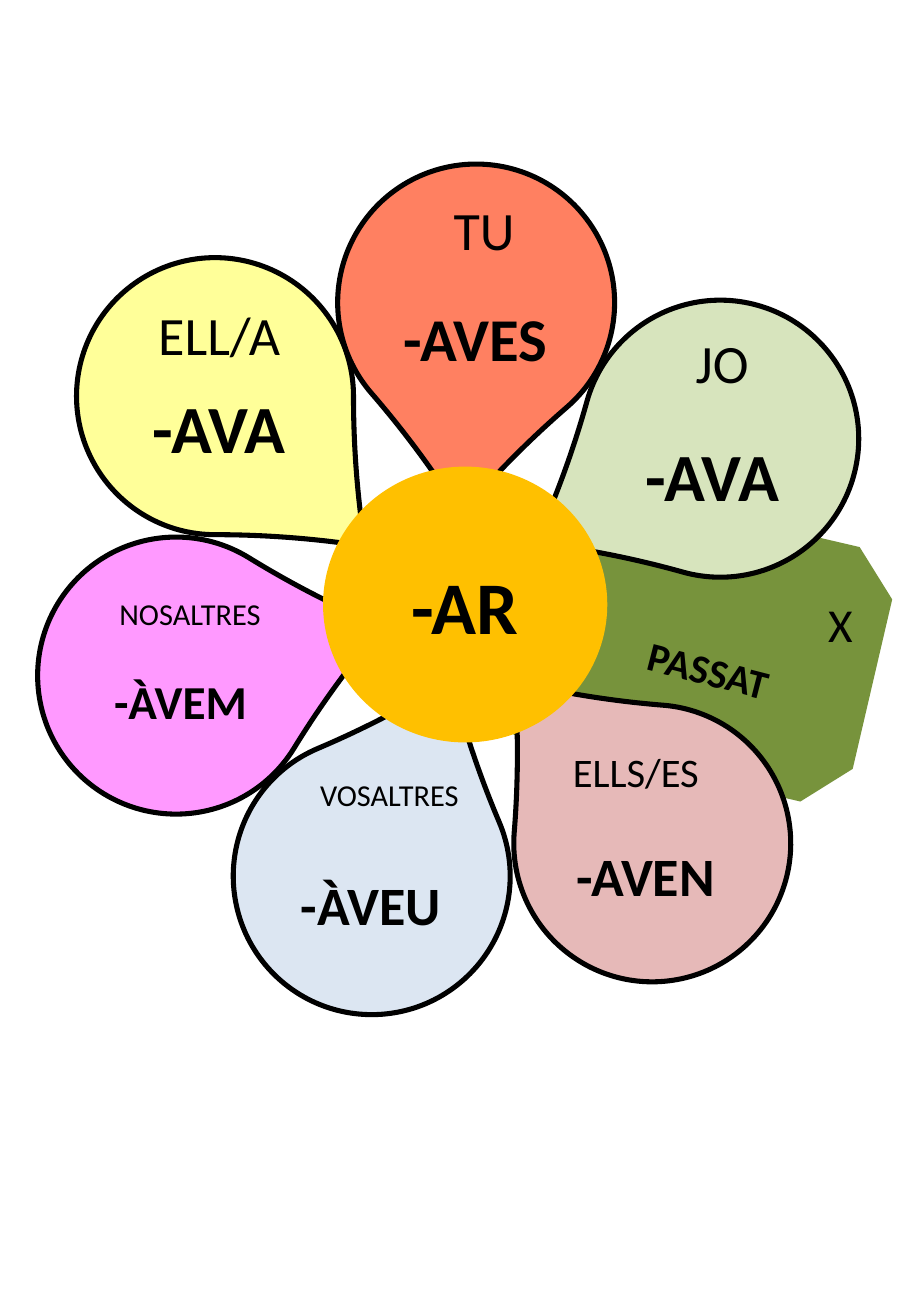
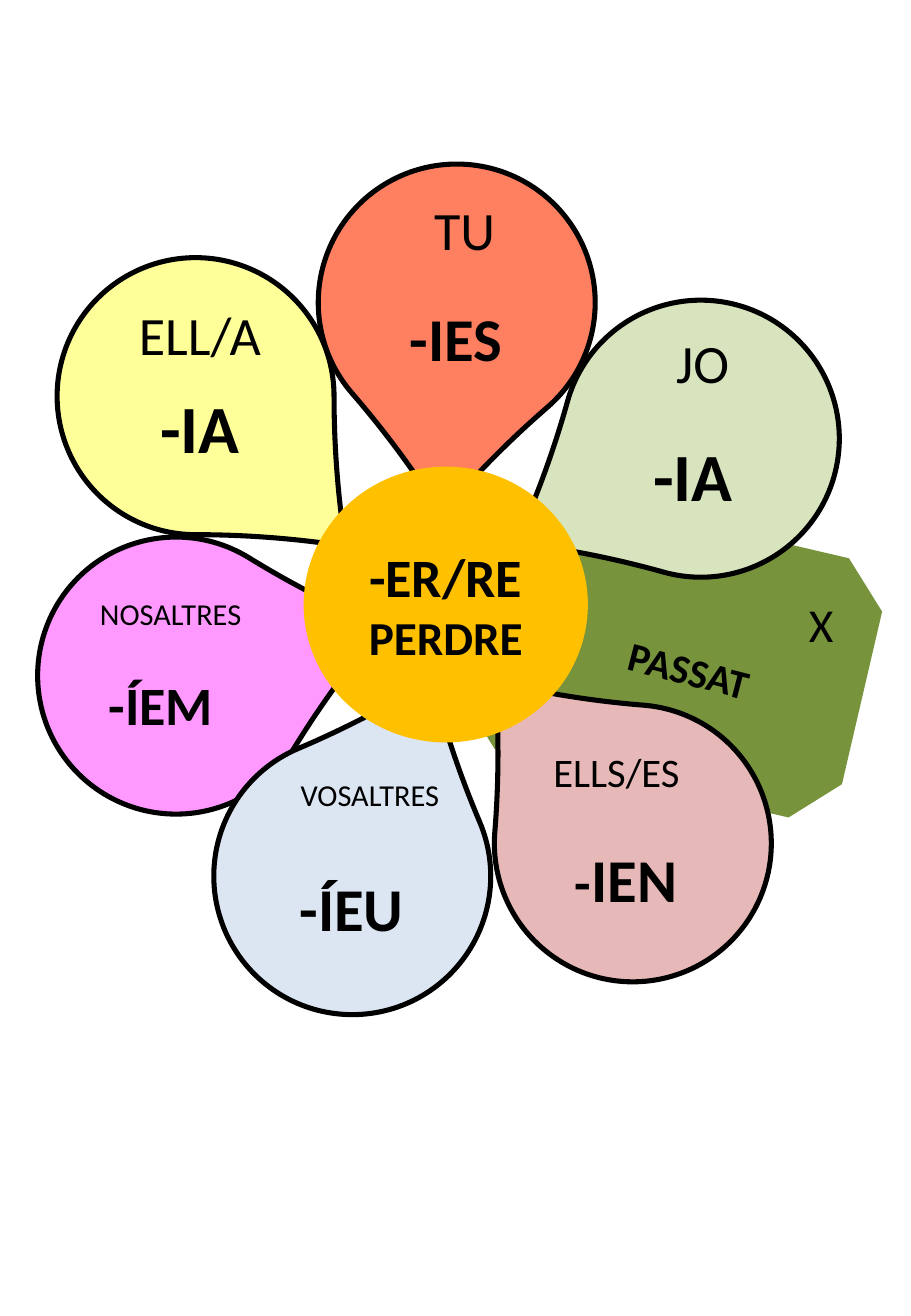
from collections import namedtuple

from lxml import etree
from pptx import Presentation
from pptx import util as u
from pptx.dml.color import RGBColor
from pptx.enum import shapes, text
from pptx.oxml.ns import qn

# Shared style
FONT = "Calibri"
BLACK = "000000"
LEAF_GREEN = "77933C"
HEART_GOLD = "FFC000"
PETAL_SIZE = 2.28
LABEL_WIDTH = 1.41

# Petal geometry, pronoun label and the place of the verb ending
Petal = namedtuple(
    "Petal", "left top turn colour opacity pronoun size label_at ending_at")
PETALS = [
    Petal(2.78, 1.35, 139.1, "FF3300", 62, "TU", 32, (3.28, 1.57), (3.21, 2.43)),
    Petal(4.79, 2.47, 195.6, "D7E4BD", 100, "JO", 32, (5.24, 2.66), (5.16, 3.52)),
    Petal(0.63, 2.12, 90, "FFFF99", 100, "ELL/A", 32, (1.1, 2.43), (1.1, 3.13)),
    Petal(0.31, 4.42, 31.6, "FF99FF", 100, "NOSALTRES", 18, (0.86, 4.85), (0.78, 5.48)),
    Petal(1.92, 6.07, 337, "DCE6F2", 100, "VOSALTRES", 18, (2.5, 6.34), (2.35, 7.12)),
    Petal(4.23, 5.8, 274.6, "E6B9B8", 100, "ELLS/ES", 24, (4.53, 6.1), (4.61, 6.88)),
]

# Verb families: each text is a list of (wording, size) spans
Flower = namedtuple("Flower", "shift leaf heart endings loose_petal")
FLOWERS = [
    Flower(0, (4.71, 3.87, 2.15, 2.87), [[("-AR", 44)]],
           {"TU": [("-AVES", 36)], "JO": [("-AVA", 40)],
            "ELL/A": [("-AVA", 40)], "NOSALTRES": [("-ÀVEM", 28)],
            "VOSALTRES": [("-ÀVEU", 32)], "ELLS/ES": [("-AVEN", 32)]},
           None),
    Flower(-0.16, (4.57, 3.94, 2.19, 2.94), [[("-ER/RE", 32)], [("PERDRE", 28)]],
           {"TU": [("-IES", 36)], "JO": [("-IA", 40)],
            "ELL/A": [("-IA", 40)], "NOSALTRES": [("-ÍEM", 32)],
            "VOSALTRES": [("-ÍEU", 36)], "ELLS/ES": [("-", 32), ("IEN", 36)]},
           "NOSALTRES"),
]


def paint(target, colour):
    """Fill a shape or colour a line's fill or a font's fill."""
    target.solid()
    target.fore_color.rgb = RGBColor.from_string(colour)


def write(frame, lines, bold, align):
    for index, spans in enumerate(lines):
        para = frame.paragraphs[0] if index == 0 else frame.add_paragraph()
        para.alignment = align
        for wording, size in spans:
            span = para.add_run()
            span.text = wording
            span.font.name = FONT
            span.font.size = u.Pt(size)
            span.font.bold = bold
            paint(span.font.fill, BLACK)


def add_figure(parent, kind, frame, colour, turn=0, adjust=()):
    figure = parent.shapes.add_shape(kind, *map(u.Inches, frame))
    figure.shadow.inherit = False
    figure.rotation = turn
    for index, value in enumerate(adjust):
        figure.adjustments[index] = value
    paint(figure.fill, colour)
    figure.line.fill.background()
    return figure


def add_petal(parent, petal, shift):
    frame = (petal.left + shift, petal.top, PETAL_SIZE, PETAL_SIZE)
    figure = add_figure(parent, shapes.MSO_SHAPE.TEAR, frame, petal.colour,
                        petal.turn, [1.083])
    paint(figure.line.fill, BLACK)
    figure.line.width = u.Pt(3)
    if petal.opacity < 100:
        colour = figure.fill._xPr.find(qn("a:solidFill"))[0]
        alpha = etree.SubElement(colour, qn("a:alpha"))
        alpha.set("val", str(petal.opacity * 1000))


def add_label(parent, spans, left, top, width=LABEL_WIDTH, bold=False,
              wrap=True, turn=0):
    height = max(size for _, size in spans) / 60 + 0.1
    box = parent.shapes.add_textbox(*map(u.Inches, (left, top, width, height)))
    box.rotation = turn
    box.text_frame.word_wrap = wrap
    box.text_frame.auto_size = text.MSO_AUTO_SIZE.SHAPE_TO_FIT_TEXT
    align = text.PP_ALIGN.CENTER if wrap else text.PP_ALIGN.LEFT
    write(box.text_frame, [spans], bold, align)


def add_heart(parent, lines, shift):
    heart = add_figure(parent, shapes.MSO_SHAPE.OVAL,
                       (2.66 + shift, 3.84, 2.34, 2.27), HEART_GOLD)
    heart.text_frame.word_wrap = True
    heart.text_frame.vertical_anchor = text.MSO_ANCHOR.MIDDLE
    write(heart.text_frame, lines, True, text.PP_ALIGN.CENTER)


def add_flower(page, flower):
    shift = flower.shift

    # A loose petal lies behind the grouped flower and keeps its place
    for petal in PETALS:
        if petal.pronoun == flower.loose_petal:
            add_petal(page, petal, 0)

    # Leaf, petals and heart
    group = page.shapes.add_group_shape()
    add_figure(group, shapes.MSO_SHAPE.SNIP_2_SAME_RECTANGLE, flower.leaf,
               LEAF_GREEN, 103.1, [0.167, 0.041])
    for petal in PETALS:
        if petal.pronoun != flower.loose_petal:
            add_petal(group, petal, shift)
    add_heart(group, flower.heart, shift)

    # Pronouns and endings
    for petal in PETALS:
        left, top = petal.label_at
        add_label(group, [(petal.pronoun, petal.size)], left + shift, top)
        left, top = petal.ending_at
        add_label(group, flower.endings[petal.pronoun], left + shift, top,
                  bold=True)

    # Words on the leaf
    add_label(group, [("PASSAT", 24)], 5.23 + shift, 5.26, 1.22, bold=True,
              wrap=False, turn=14.4)
    add_label(group, [("X", 28)], 6.72 + shift, 4.85, 0.41, wrap=False)


def main():
    deck = Presentation()
    deck.slide_width = u.Inches(7.5)
    deck.slide_height = u.Inches(10.83)
    for flower in FLOWERS:
        add_flower(deck.slides.add_slide(deck.slide_layouts[6]), flower)
    deck.save("out.pptx")


if __name__ == "__main__":
    main()
